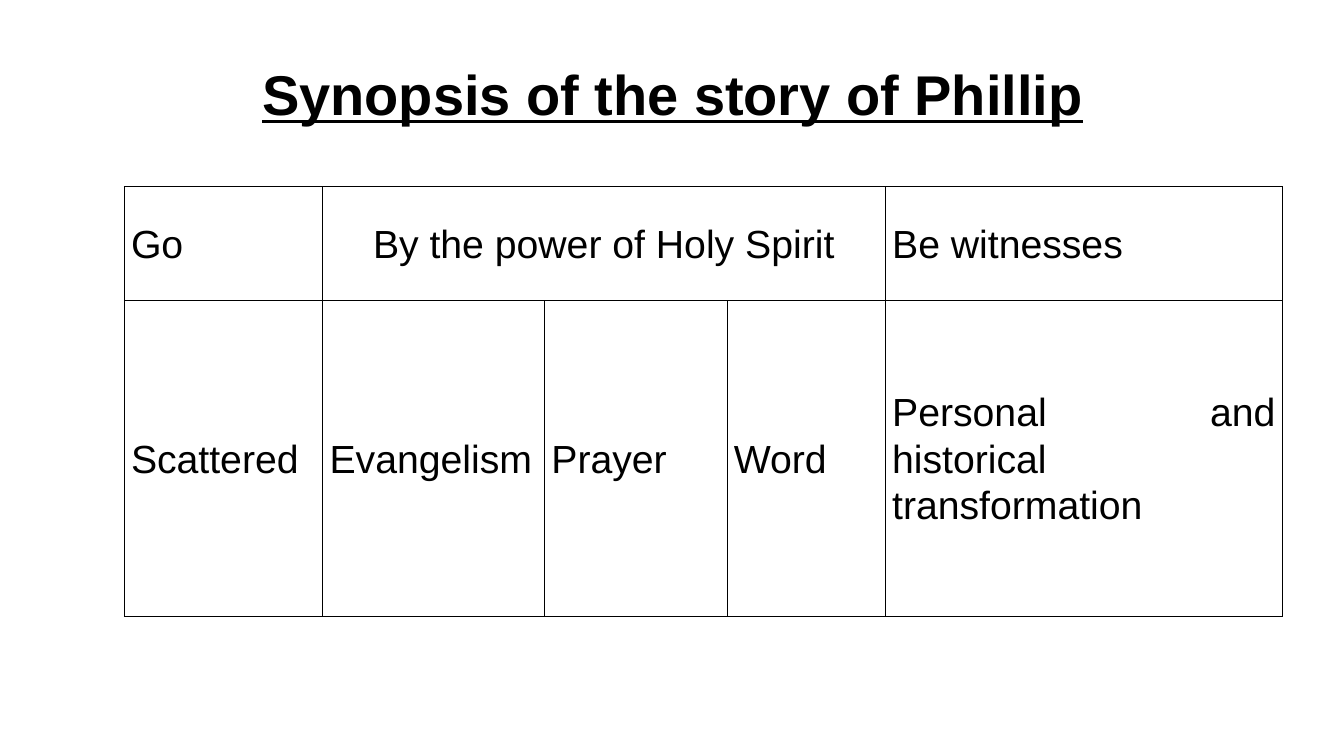
from lxml import etree
from pptx import Presentation
from pptx.dml.color import RGBColor
from pptx.enum.text import MSO_ANCHOR as Anchor, PP_ALIGN as Align
from pptx.oxml.ns import qn
from pptx.util import Inches, Pt

# Content
TITLE = "Synopsis of the story of Phillip"
COLUMN_WIDTHS = [1.97, 2.2, 1.81, 1.57, 3.94]
ROW_HEIGHTS = [1.13, 3.13]
# (row, column, columns spanned, left margin, text)
CELLS = [
    (0, 0, 1, 0.07, "Go"),
    (0, 1, 3, 0.5, "By the power of Holy Spirit"),
    (0, 4, 1, 0.07, "Be witnesses"),
    (1, 0, 1, 0.07, "Scattered"),
    (1, 1, 1, 0.07, "Evangelism"),
    (1, 2, 1, 0.07, "Prayer"),
    (1, 3, 1, 0.07, "Word"),
    (1, 4, 1, 0.07, "Personal and historical transformation"),
]
BLACK = "000000"


def set_font(font, size, bold=False, underline=False, color=BLACK):
    font.name = "Arial"
    font.size = Pt(size)
    font.bold = bold
    font.underline = underline
    font.color.rgb = RGBColor.from_string(color)


def set_borders(cell, color=BLACK, width=0.28):
    properties = cell._tc.get_or_add_tcPr()
    for index, side in enumerate(("lnL", "lnR", "lnT", "lnB")):
        line = etree.Element(qn(f"a:{side}"), w=str(Pt(width)))
        fill = etree.SubElement(line, qn("a:solidFill"))
        etree.SubElement(fill, qn("a:srgbClr"), val=color)
        properties.insert(index, line)


presentation = Presentation()
presentation.slide_width = Inches(13.33)
presentation.slide_height = Inches(7.5)
slide = presentation.slides.add_slide(presentation.slide_layouts[5])

# Title
title = slide.shapes.title
title.left, title.top = Inches(0.67), Inches(0.3)
title.width, title.height = Inches(12), Inches(1.25)
title.text_frame.text = TITLE
title.text_frame.vertical_anchor = Anchor.MIDDLE
paragraph = title.text_frame.paragraphs[0]
paragraph.alignment = Align.CENTER
set_font(paragraph.font, 40, bold=True, underline=True)

# Table grid
table = slide.shapes.add_table(
    len(ROW_HEIGHTS), len(COLUMN_WIDTHS), Inches(1.23), Inches(1.85),
    Inches(sum(COLUMN_WIDTHS)), Inches(sum(ROW_HEIGHTS))).table
table.first_row = table.horz_banding = False
for column, width in zip(table.columns, COLUMN_WIDTHS):
    column.width = Inches(width)
for row, height in zip(table.rows, ROW_HEIGHTS):
    row.height = Inches(height)
for cell in table.iter_cells():
    cell.fill.background()
    set_borders(cell)

# Table text
for row, column, span, left_margin, text in CELLS:
    cell = table.cell(row, column)
    if span > 1:
        cell.merge(table.cell(row, column + span - 1))
    cell.text = text
    cell.vertical_anchor = Anchor.MIDDLE
    cell.margin_left, cell.margin_right = Inches(left_margin), Inches(0.07)
    cell.margin_top = cell.margin_bottom = Inches(0.02)
    paragraph = cell.text_frame.paragraphs[0]
    paragraph.alignment = Align.JUSTIFY
    paragraph.line_spacing = 1.07
    paragraph.space_after = Pt(8)
    set_font(paragraph.font, 28)

presentation.save("out.pptx")
